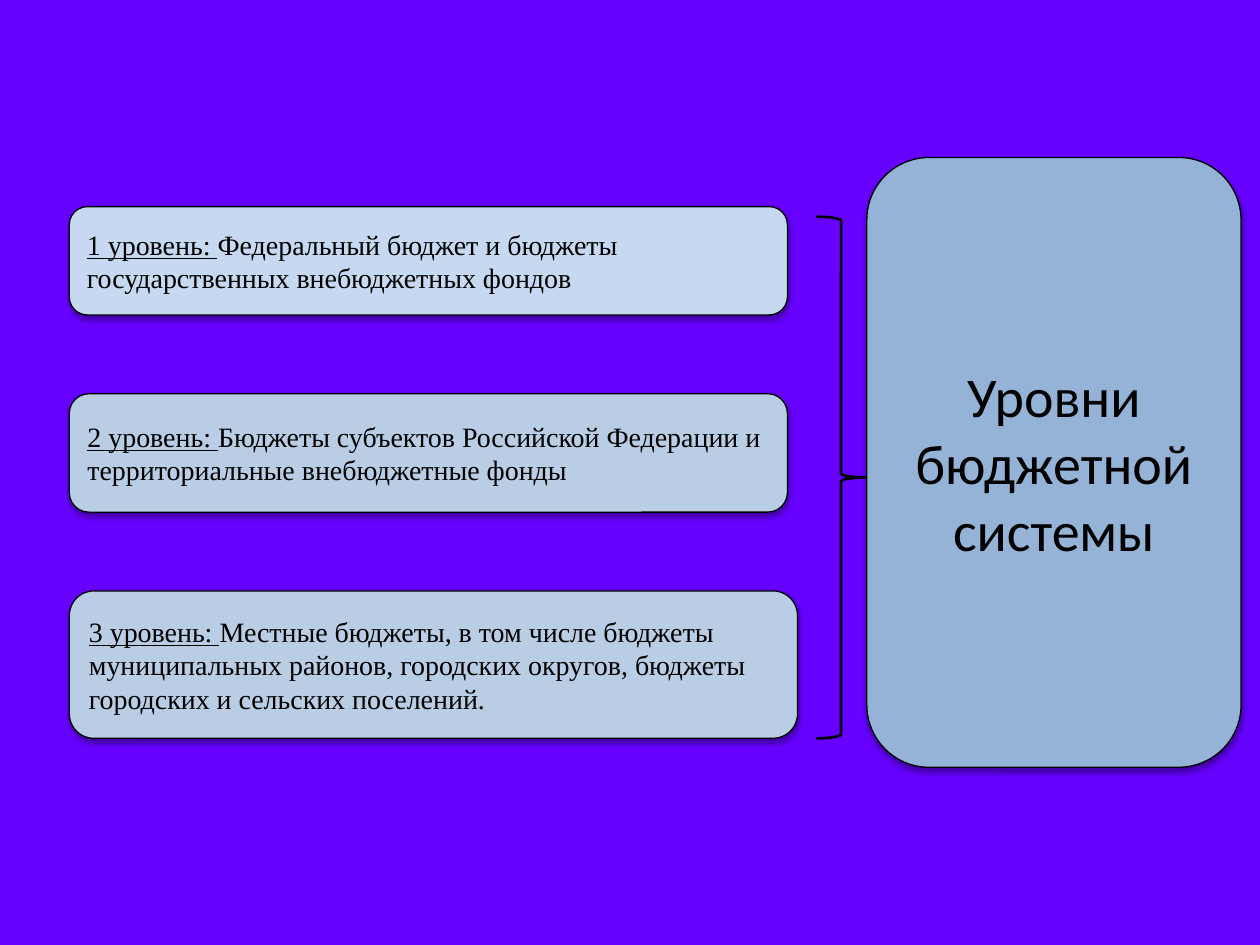
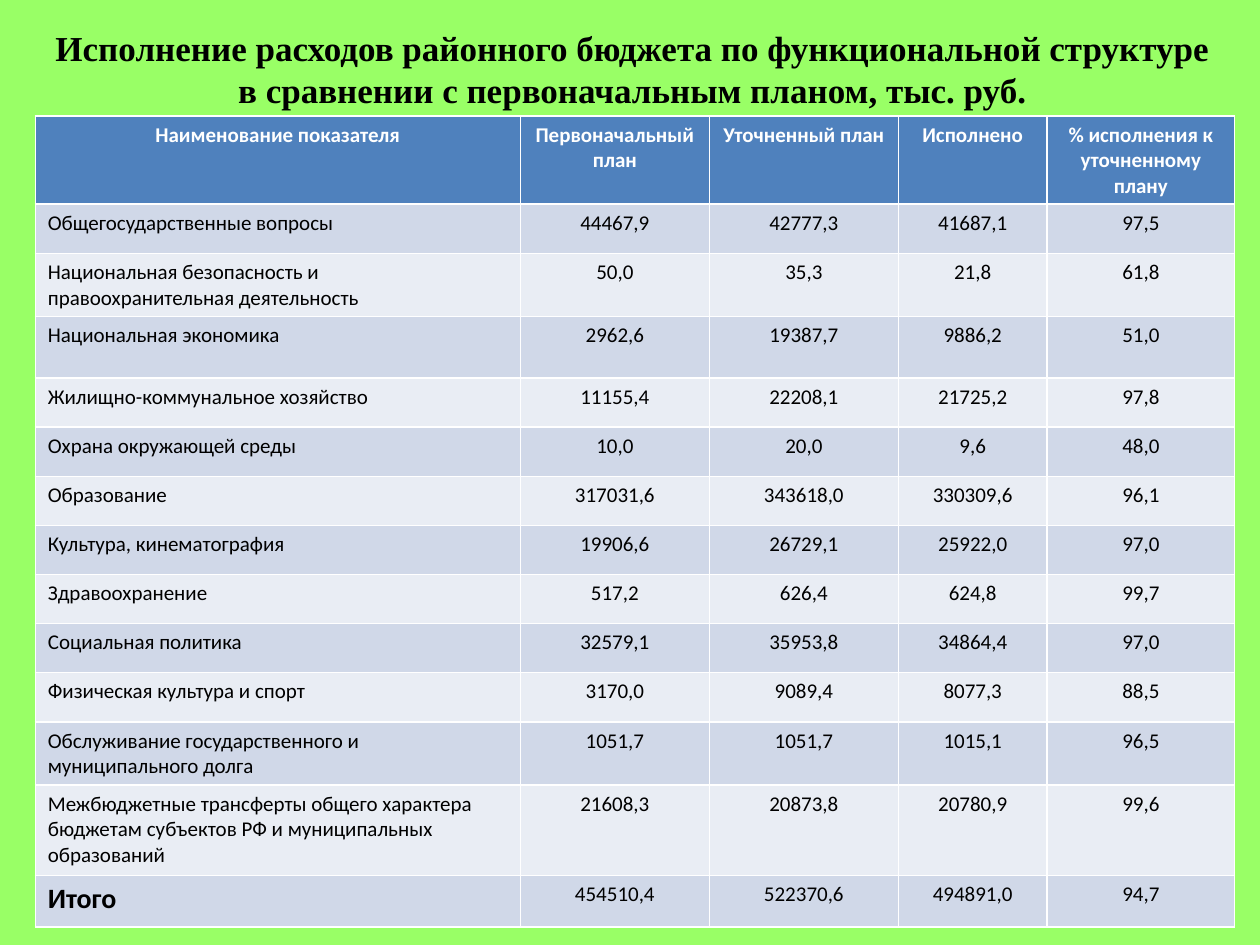
"""Build two slides on budget levels and budget spending."""
import dataclasses
import typing

import lxml.etree
import pptx
import pptx.dml.color
import pptx.enum.shapes
import pptx.enum.text
import pptx.oxml.ns
import pptx.util

SHAPE = pptx.enum.shapes.MSO_SHAPE
ALIGN = pptx.enum.text.PP_ALIGN
ANCHOR = pptx.enum.text.MSO_ANCHOR


@dataclasses.dataclass(frozen=True)
class Theme:
    """Colours, fonts and type sizes of both slides."""
    violet: str = "6600FF"
    green: str = "99FF66"
    black: str = "000000"
    white: str = "FFFFFF"
    steel: str = "95B3D7"
    ice: str = "C6D9F1"
    mist: str = "B9CDE5"
    header: str = "4F81BD"
    bands: tuple[str, str] = ("E9EDF4", "D0D8E8")
    sans: str = "Calibri"
    serif: str = "Times New Roman"
    large: float = 32
    title: float = 20
    label: float = 16
    small: float = 12
    thin: float = 0.75
    thick: float = 1.5


@dataclasses.dataclass(frozen=True)
class Grid:
    """A slide of equal columns and rows, a tenth of an inch each."""
    cols: int = 100
    rows: int = 75
    unit: int = pptx.util.Inches(0.1)

    def size(self, count: float) -> int:
        """Turn a count of columns or rows into a length."""
        return pptx.util.Emu(round(count * self.unit))


@dataclasses.dataclass(frozen=True)
class Box:
    """A place on the grid."""
    left: float
    top: float
    width: float
    height: float

    def place(self) -> list[int]:
        """Return left, top, width and height as lengths."""
        return [GRID.size(v) for v in dataclasses.astuple(self)]


@dataclasses.dataclass(frozen=True)
class Level:
    """One level of the budget system."""
    name: str
    text: str
    fill: str
    width: float
    height: float


class Row(typing.NamedTuple):
    """One line of the spending table."""
    name: str
    plan: str
    final: str
    spent: str
    share: str
    height: float = 3.9


THEME = Theme()
GRID = Grid()
LEFT, TOP, GAP = 5.5, 16.4, 6.25
SYSTEM = Box(68.8, 12.5, 29.7, 48.4)
BRACE = Box(64.8, 17.2, 3.9, 41.4)
TITLE = Box(3.3, 1.6, 93.8, 7.7)
TABLE = Box(2.8, 9.2, 95.2, 64.4)
COLS = (38.5, 15, 15, 11.8, 14.9)

LEVELS = (
    Level("1 уровень: ", "Федеральный бюджет и бюджеты государственных внебюджетных фондов",
          THEME.ice, 57, 8.6),
    Level("2 уровень: ", "Бюджеты субъектов Российской Федерации и территориальные "
          "внебюджетные фонды", THEME.mist, 57, 9.4),
    Level("3 уровень: ", "Местные бюджеты, в том числе бюджеты муниципальных районов, "
          "городских округов, бюджеты городских и сельских поселений.",
          THEME.mist, 57.8, 11.7),
)

ROWS = (
    Row("Наименование показателя", "Первоначальный план", "Уточненный план", "Исполнено",
        "% исполнения к уточненному плану", 6.8),
    Row("Общегосударственные вопросы", "44467,9", "42777,3", "41687,1", "97,5"),
    Row("Национальная безопасность и правоохранительная деятельность",
        "50,0", "35,3", "21,8", "61,8", 5),
    Row("Национальная экономика", "2962,6", "19387,7", "9886,2", "51,0", 4.9),
    Row("Жилищно-коммунальное хозяйство", "11155,4", "22208,1", "21725,2", "97,8"),
    Row("Охрана окружающей среды", "10,0", "20,0", "9,6", "48,0"),
    Row("Образование", "317031,6", "343618,0", "330309,6", "96,1"),
    Row("Культура, кинематография", "19906,6", "26729,1", "25922,0", "97,0"),
    Row("Здравоохранение", "517,2", "626,4", "624,8", "99,7"),
    Row("Социальная политика", "32579,1", "35953,8", "34864,4", "97,0"),
    Row("Физическая культура и спорт", "3170,0", "9089,4", "8077,3", "88,5"),
    Row("Обслуживание государственного и муниципального долга",
        "1051,7", "1051,7", "1015,1", "96,5", 5),
    Row("Межбюджетные трансферты общего характера бюджетам субъектов РФ и "
        "муниципальных образований", "21608,3", "20873,8", "20780,9", "99,6", 7.2),
    Row("Итого", "454510,4", "522370,6", "494891,0", "94,7", 4.1),
)


def paint(fill, tint: str) -> None:
    """Give a fill one solid colour."""
    fill.solid()
    fill.fore_color.rgb = pptx.dml.color.RGBColor.from_string(tint)


def style(par, face: str, size: float, tint: str = THEME.black,
          bold: bool = False, align=ALIGN.LEFT) -> None:
    """Set the font and alignment of a paragraph."""
    par.alignment = align
    par.font.name, par.font.size, par.font.bold = face, pptx.util.Pt(size), bold
    par.font.color.rgb = pptx.dml.color.RGBColor.from_string(tint)


def shade(shape) -> None:
    """Drop a soft shadow straight below a shape."""
    shape.shadow.inherit = False
    list_ = shape._element.spPr.find(pptx.oxml.ns.qn("a:effectLst"))
    drop = lxml.etree.SubElement(
        list_, pptx.oxml.ns.qn("a:outerShdw"), blurRad=str(pptx.util.Pt(3.1)),
        dist=str(pptx.util.Pt(1.8)), dir="5400000", rotWithShape="0")
    tint = lxml.etree.SubElement(drop, pptx.oxml.ns.qn("a:srgbClr"), val=THEME.black)
    lxml.etree.SubElement(tint, pptx.oxml.ns.qn("a:alpha"), val="35000")


def outline(slide, kind, box: Box, weight: float):
    """Add a preset shape with a black line."""
    shape = slide.shapes.add_shape(kind, *box.place())
    shape.shadow.inherit = False
    paint(shape.line.fill, THEME.black)
    shape.line.width = pptx.util.Pt(weight)
    return shape


def panel(slide, box: Box, fill: str):
    """Add a rounded panel and return its first paragraph."""
    shape = outline(slide, SHAPE.ROUNDED_RECTANGLE, box, THEME.thin)
    paint(shape.fill, fill)
    shade(shape)
    frame = shape.text_frame
    frame.word_wrap, frame.vertical_anchor = True, ANCHOR.MIDDLE
    return frame.paragraphs[0]


def start(deck, layout: str, tint: str):
    """Add a slide with a plain background."""
    slide = deck.slides.add_slide(deck.slide_layouts.get_by_name(layout))
    paint(slide.background.fill, tint)
    return slide


def draw_levels(deck) -> None:
    """Draw the levels of the budget system."""
    slide = start(deck, "Blank", THEME.violet)
    par = panel(slide, SYSTEM, THEME.steel)
    par.text = "Уровни бюджетной системы"
    style(par, THEME.sans, THEME.large, align=ALIGN.CENTER)
    top = TOP
    for level in LEVELS:
        par = panel(slide, Box(LEFT, top, level.width, level.height), level.fill)
        style(par, THEME.serif, THEME.label)
        name, text = par.add_run(), par.add_run()
        name.text, text.text = level.name, level.text
        name.font.underline = True
        top += level.height + GAP
    outline(slide, SHAPE.RIGHT_BRACE, BRACE, THEME.thick).fill.background()


def draw_spending(deck) -> None:
    """Draw the table of spending against the plan."""
    slide = start(deck, "Title Only", THEME.green)
    title = slide.shapes.title
    title.left, title.top, title.width, title.height = TITLE.place()
    frame = title.text_frame
    frame.text = ("Исполнение расходов районного бюджета по функциональной структуре "
                  "в сравнении с первоначальным планом, тыс. руб.")
    frame.word_wrap, frame.vertical_anchor = True, ANCHOR.TOP
    frame.auto_size = pptx.enum.text.MSO_AUTO_SIZE.SHAPE_TO_FIT_TEXT
    style(frame.paragraphs[0], THEME.serif, THEME.title, bold=True, align=ALIGN.CENTER)

    table = slide.shapes.add_table(len(ROWS), len(COLS), *TABLE.place()).table
    for col, width in zip(table.columns, COLS):
        col.width = GRID.size(width)
    for y, row in enumerate(ROWS):
        table.rows[y].height = GRID.size(row.height)
        head = y == 0
        for x, text in enumerate(row[:len(COLS)]):
            cell = table.cell(y, x)
            cell.text = text
            paint(cell.fill, THEME.header if head else THEME.bands[y % 2])
            total = y == len(ROWS) - 1 and x == 0
            style(cell.text_frame.paragraphs[0], THEME.sans,
                  THEME.label if total else THEME.small,
                  THEME.white if head else THEME.black, head or total,
                  ALIGN.CENTER if head or x else ALIGN.LEFT)


def main() -> None:
    """Build the slides and save them."""
    deck = pptx.Presentation()
    deck.slide_width, deck.slide_height = GRID.size(GRID.cols), GRID.size(GRID.rows)
    draw_levels(deck)
    draw_spending(deck)
    deck.save("out.pptx")


if __name__ == "__main__":
    main()
